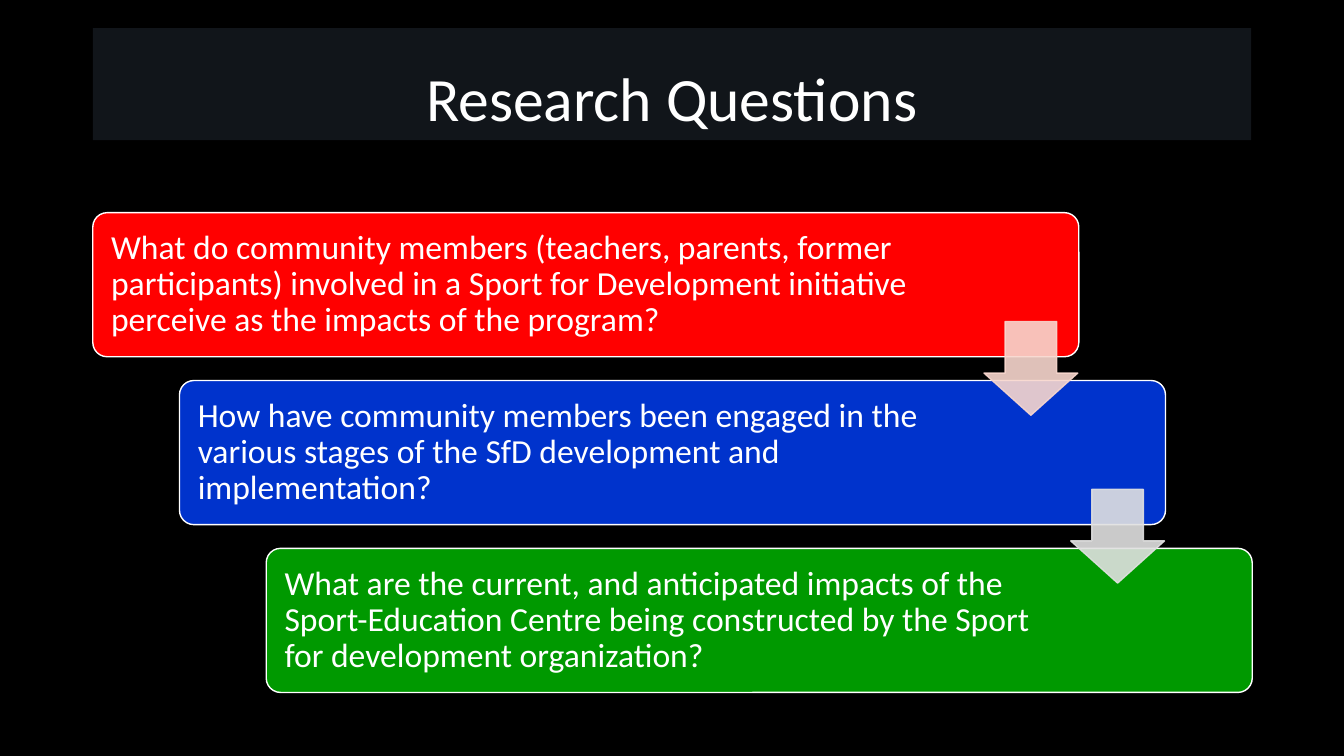
from pptx import Presentation
from pptx.dml.color import RGBColor
from pptx.enum.shapes import MSO_SHAPE
from pptx.enum.text import MSO_ANCHOR, PP_ALIGN
from pptx.util import Inches, Pt
from lxml.etree import SubElement
from pptx.oxml.ns import qn

BLACK = RGBColor(0x00, 0x00, 0x00)
WHITE = RGBColor(0xFF, 0xFF, 0xFF)
SLATE = RGBColor(0x11, 0x15, 0x1A)
RED = RGBColor(0xFF, 0x00, 0x00)
BLUE = RGBColor(0x00, 0x33, 0xCC)
GREEN = RGBColor(0x00, 0x99, 0x00)
PEACH = RGBColor(0xF8, 0xD7, 0xCE)
GREY = RGBColor(0xE1, 0xE1, 0xE1)

TITLE = "Research Questions"
CARDS = [
    ("What do community members (teachers, parents, former participants) involved "
     "in a Sport for Development initiative perceive as the impacts of the program?",
     RED, 1.61),
    ("How have community members been engaged in the various stages of the SfD "
     "development and implementation?", BLUE, 1.94),
    ("What are the current, and anticipated impacts of the Sport-Education Centre "
     "being constructed by the Sport for development organization?", GREEN, 1.94),
]
ARROWS = [PEACH, GREY]

LEFT, TOP = 0.92, 2.11
WIDE, HIGH = 9.78, 1.43
STEP_X, STEP_Y = 0.86, 1.665
ARROW_X, ARROW_Y, ARROW = 9.76, 3.19, 0.93


def apply(item, style):
    for name, value in style.items():
        setattr(item, name, value)


def write(shape, text, size, frame, para):
    box = shape.text_frame
    box.text = text
    apply(box, {"word_wrap": True, **frame})
    line = box.paragraphs[0]
    apply(line, {"line_spacing": 0.9, **para})
    font = line.runs[0].font
    apply(font, {"name": "Calibri", "size": Pt(size)})
    font.color.rgb = WHITE


def draw(slide, kind, place, adjust, fill, edge):
    shape = slide.shapes.add_shape(kind, *map(Inches, place))
    shape.shadow.inherit = False
    for i, value in enumerate(adjust):
        shape.adjustments[i] = value
    shape.fill.solid()
    shape.fill.fore_color.rgb = fill
    shape.line.color.rgb = edge
    shape.line.width = Pt(1)
    return shape


def fade(shape, percent):
    for color in shape._element.spPr.iter(qn("a:srgbClr")):
        SubElement(color, qn("a:alpha")).set("val", str(percent * 1000))


def main():
    deck = Presentation()
    apply(deck, {"slide_width": Inches(13.33), "slide_height": Inches(7.5)})
    slide = deck.slides.add_slide(deck.slide_layouts[5])
    back = slide.background.fill
    back.solid()
    back.fore_color.rgb = BLACK

    title = slide.shapes.title
    apply(title, {"left": Inches(LEFT), "top": Inches(0.28),
                  "width": Inches(11.49), "height": Inches(1.11)})
    title.fill.solid()
    title.fill.fore_color.rgb = SLATE
    write(title, TITLE, 44, {"vertical_anchor": MSO_ANCHOR.BOTTOM},
          {"alignment": PP_ALIGN.CENTER})

    for i, (text, color, inset) in enumerate(CARDS):
        place = (LEFT + i * STEP_X, TOP + i * STEP_Y, WIDE, HIGH)
        card = draw(slide, MSO_SHAPE.ROUNDED_RECTANGLE, place, [0.1], color, WHITE)
        write(card, text, 24,
              {"vertical_anchor": MSO_ANCHOR.MIDDLE, "margin_left": Inches(0.14),
               "margin_right": Inches(inset)},
              {"alignment": PP_ALIGN.LEFT})

    for i, color in enumerate(ARROWS):
        place = (ARROW_X + i * STEP_X, ARROW_Y + i * STEP_Y, ARROW, ARROW)
        fade(draw(slide, MSO_SHAPE.DOWN_ARROW, place, [0.55, 0.45], color, color), 90)

    deck.save("out.pptx")


if __name__ == "__main__":
    main()
